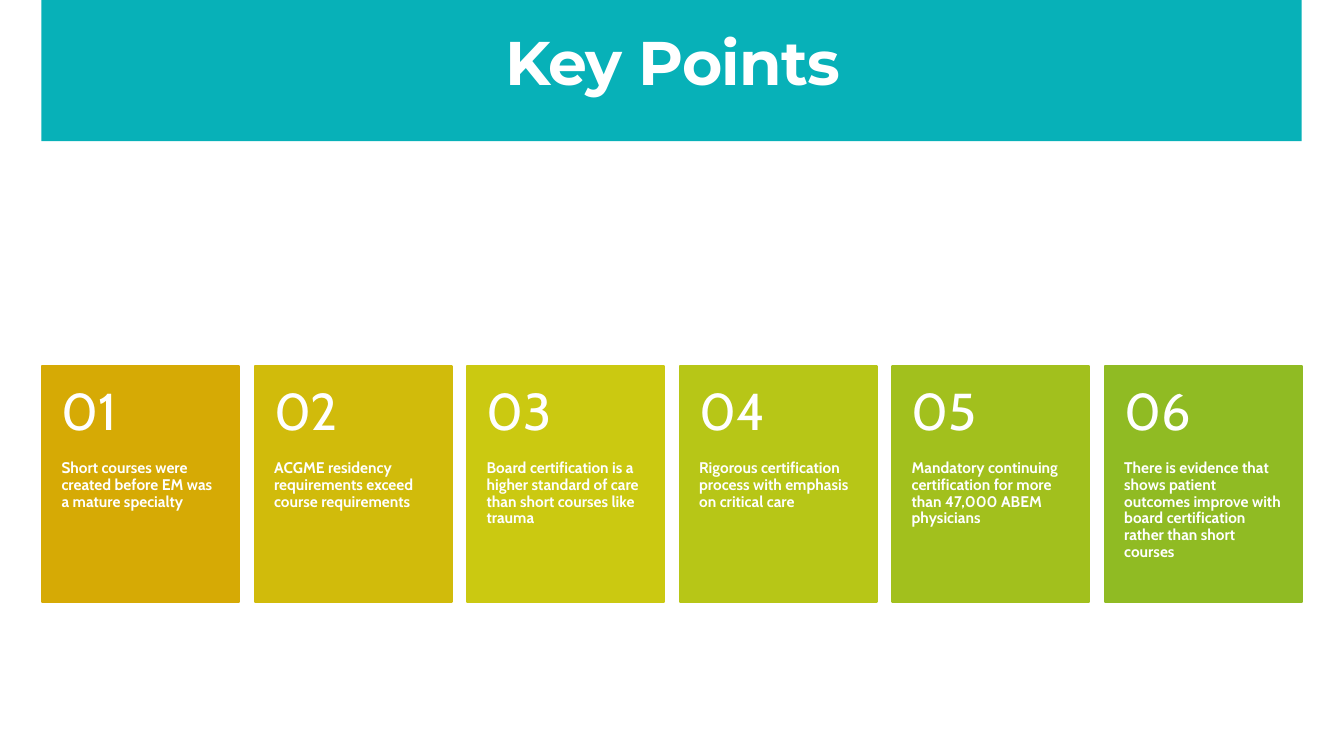
from pptx import Presentation
from pptx import util as u
from pptx.dml.color import RGBColor
from pptx.enum import shapes, text

HUES = {
    "white": "FFFFFF", "teal": "07B1B8",
    "amber": "D6AA05", "gold": "D1BB0B", "yellow": "CBC911",
    "lime": "B7C617", "leaf": "A2C01D", "green": "90BB23",
}

POINTS = [
    ("amber", "Short courses were created before EM was a mature specialty"),
    ("gold", "ACGME residency requirements exceed course requirements"),
    ("yellow", "Board certification is a higher standard of care than short courses like trauma"),
    ("lime", "Rigorous certification process with emphasis on critical care"),
    ("leaf", "Mandatory continuing certification for more than 47,000 ABEM physicians"),
    ("green", "There is evidence that shows patient outcomes improve with "
              "board certification rather than short courses"),
]


class Deck:
    head, body = "Montserrat", "Cabin"

    def __init__(self, slide):
        self.slide = slide

    def hue(self, name):
        return RGBColor.from_string(HUES[name])

    def rect(self, x, y, w, h, hue, edge=None):
        box = self.slide.shapes.add_shape(
            shapes.MSO_SHAPE.RECTANGLE, *map(u.Inches, (x, y, w, h)))
        box.shadow.inherit = False
        box.fill.solid()
        box.fill.fore_color.rgb = self.hue(hue)
        if edge:
            box.line.color.rgb = self.hue(hue)
            box.line.width = u.Pt(edge)
        else:
            box.line.fill.background()

    def label(self, x, y, w, h, words, size, font, pads,
              bold=False, middle=False, center=False, track=None):
        box = self.slide.shapes.add_textbox(*map(u.Inches, (x, y, w, h)))
        frame = box.text_frame
        frame.word_wrap = True
        anchor = text.MSO_ANCHOR
        frame.vertical_anchor = anchor.MIDDLE if middle else anchor.TOP
        (frame.margin_left, frame.margin_top,
         frame.margin_right, frame.margin_bottom) = map(u.Inches, pads)
        para = frame.paragraphs[0]
        para.line_spacing = 0.9
        align = text.PP_ALIGN
        para.alignment = align.CENTER if center else align.LEFT
        run = para.add_run()
        run.text = words
        run.font.name = font
        run.font.size = u.Pt(size)
        run.font.bold = bold
        run.font.color.rgb = self.hue("white")
        if track:
            # Letter spacing in hundredths of a point
            run._r.get_or_add_rPr().set("spc", str(track))

    def card(self, x, num, hue, words):
        top, wide, high, split = 3.63, 1.95, 2.34, 0.94
        self.rect(x, top, wide, high, hue, edge=1.5)
        self.label(x, top + split, wide, high - split, words, 11, self.body,
                   (0.19, 0, 0.19, 0.36), bold=True)
        self.label(x, top, wide, split, f"{num:02}", 37, self.body,
                   (0.19, 0.18, 0.19, 0.18), middle=True)


def main():
    show = Presentation()
    show.slide_width, show.slide_height = u.Inches(13.33), u.Inches(7.5)
    deck = Deck(show.slides.add_slide(show.slide_layouts[6]))

    # Title band
    deck.rect(0.41, 0, 12.5, 1.4, "teal")
    deck.label(0.61, -0.09, 12.12, 1.49, "Key Points", 44, deck.head,
               (0.1, 0.05, 0.1, 0.05), bold=True, middle=True, center=True,
               track=-60)

    # Row of numbered cards
    left, last = 0.42, 10.96
    step = (last - left) / (len(POINTS) - 1)
    for i, (hue, words) in enumerate(POINTS):
        deck.card(left + i * step, i + 1, hue, words)

    show.save("out.pptx")


if __name__ == "__main__":
    main()
